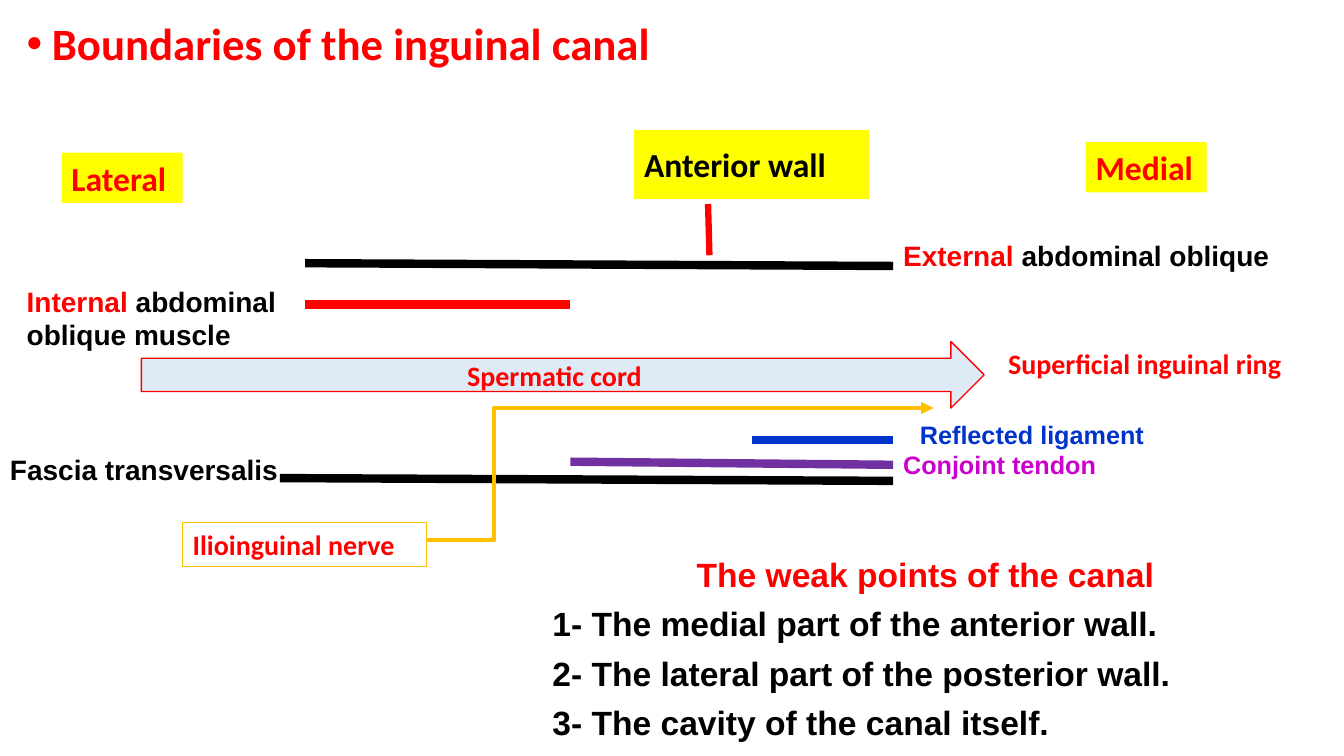
from lxml import etree
from pptx import Presentation
from pptx.dml.color import RGBColor
from pptx.enum.shapes import MSO_CONNECTOR, MSO_SHAPE
from pptx.enum.text import MSO_ANCHOR, PP_ALIGN
from pptx.oxml.ns import qn
from pptx.util import Pt

STRAIGHT, ELBOW = MSO_CONNECTOR.STRAIGHT, MSO_CONNECTOR.ELBOW
RECTANGLE, ARROW = MSO_SHAPE.RECTANGLE, MSO_SHAPE.RIGHT_ARROW
CALLOUT = MSO_SHAPE.LINE_CALLOUT_1_NO_BORDER
TOP, MIDDLE = MSO_ANCHOR.TOP, MSO_ANCHOR.MIDDLE
LEFT, CENTER = PP_ALIGN.LEFT, PP_ALIGN.CENTER

COLORS = {
    "red": "FF0000", "black": "000000", "blue": "0033CC", "magenta": "CC00CC",
    "purple": "7030A0", "yellow": "FFFF00", "pale": "DEEBF7", "gold": "FFC000",
}

TITLE = "Boundaries of the inguinal canal"
WALL_RIGHT = 638
LAYERS = [
    ((218, 188), (WALL_RIGHT, 190), "black"),
    ((218, 217.5), (407.5, 217.5), "red"),
    ((200, 341.5), (WALL_RIGHT, 343.5), "black"),
    ((537, 314.5), (WALL_RIGHT, 314.5), "blue"),
    ((407.5, 329.8), (WALL_RIGHT, 332), "purple"),
]
LABELS = [
    ((WALL_RIGHT, 166.5, 315, 31.5), "Arial", 20, [("External", "red"), (" abdominal oblique", "black")]),
    ((12, 199.5, 211, 55.5), "Arial", 20, [("Internal", "red"), (" abdominal oblique muscle", "black")]),
    ((0, 320, 218, 31.5), "Arial", 20, [("Fascia transversalis", "black")]),
    ((WALL_RIGHT, 317.5, 192, 29), "Arial", 18, [("Conjoint tendon", "magenta")]),
    ((650, 296, 192, 29), "Arial", 18, [("Reflected ligament", "blue")]),
    ((713, 244, 212, 31.5), "Calibri", 20, [("Superficial inguinal ring", "red")]),
]
SHAPES = [
    (RECTANGLE, (44, 109, 86.5, 36), "yellow", None, 0, "Lateral", 24, "red", TOP, LEFT),
    (RECTANGLE, (775.5, 101.5, 86.5, 36), "yellow", None, 0, "Medial", 24, "red", TOP, LEFT),
    (CALLOUT, (453, 93, 168, 49), "yellow", "red", 4.5, "Anterior wall", 24, "black", MIDDLE, LEFT),
    (ARROW, (101, 244, 602, 47.5), "pale", "red", 1, "Spermatic cord", 20, "red", MIDDLE, CENTER),
    (RECTANGLE, (130.5, 373.5, 174, 31.5), None, "gold", 0.75, "Ilioinguinal nerve", 20, "red", TOP, LEFT),
]
CALLOUT_POINTS = (1.076, 0.314, 1.823, 0.32)
NERVE = ((304.5, 386), (667, 291.5))
NERVE_BEND = 13400
WEAK_BOX = (369.5, 386, 583, 146)
WEAK_TITLE = "The weak points of the canal"
WEAK_POINTS = [
    "1- The medial part of the anterior wall.",
    "2- The lateral part of the posterior wall.",
    "3- The cavity of the canal itself.",
]


def rgb(name):
    return RGBColor.from_string(COLORS[name])


def points(values):
    return [Pt(value) for value in values]


def write(para, spans, font, size):
    for text, color in spans:
        span = para.add_run()
        span.text = text
        span.font.color.rgb = rgb(color)
    para.font.name, para.font.size, para.font.bold = font, Pt(size), True


def add_box(page, place):
    frame = page.shapes.add_textbox(*points(place)).text_frame
    frame.word_wrap = True
    return frame


def add_title(page):
    para = add_box(page, (12, 12, 882, 474)).paragraphs[0]
    para.line_spacing = 0.9
    props = para._p.get_or_add_pPr()
    props.set("marL", str(Pt(18)))
    props.set("indent", str(Pt(-18)))
    color = etree.SubElement(props, qn("a:buClr"))
    etree.SubElement(color, qn("a:srgbClr"), val=COLORS["red"])
    etree.SubElement(props, qn("a:buFont"), typeface="Arial")
    etree.SubElement(props, qn("a:buChar"), char="•")
    write(para, [(TITLE, "red")], "Calibri", 32)


def add_line(page, kind, start, end, color, width):
    line = page.shapes.add_connector(kind, *points(start + end))
    line.line.color.rgb = rgb(color)
    line.line.width = Pt(width)
    etree.SubElement(line._element.spPr, qn("a:effectLst"))
    return line


def add_nerve(page):
    nerve = add_line(page, ELBOW, *NERVE, "gold", 3)
    etree.SubElement(nerve.line._get_or_add_ln(), qn("a:tailEnd"), type="triangle")
    guides = nerve._element.spPr.find(qn("a:prstGeom")).find(qn("a:avLst"))
    etree.SubElement(guides, qn("a:gd"), name="adj1", fmla=f"val {NERVE_BEND}")


def add_shape(page, kind, place, fill, outline, width, text, size, color, anchor, align):
    shape = page.shapes.add_shape(kind, *points(place))
    shape.shadow.inherit = False
    if fill:
        shape.fill.solid()
        shape.fill.fore_color.rgb = rgb(fill)
    else:
        shape.fill.background()
    if outline:
        shape.line.color.rgb = rgb(outline)
        shape.line.width = Pt(width)
    else:
        shape.line.fill.background()
    if kind == CALLOUT:
        for index, value in enumerate(CALLOUT_POINTS):
            shape.adjustments[index] = value
    frame = shape.text_frame
    frame.word_wrap = True
    frame.vertical_anchor = anchor
    para = frame.paragraphs[0]
    para.alignment = align
    write(para, [(text, color)], "Calibri", size)


def add_weak_points(page):
    frame = add_box(page, WEAK_BOX)
    for index, text in enumerate([WEAK_TITLE] + WEAK_POINTS):
        para = frame.add_paragraph() if index else frame.paragraphs[0]
        para.line_spacing = 1.22
        if index:
            para._p.get_or_add_pPr().set("marL", str(Pt(18)))
        else:
            para.alignment = CENTER
        write(para, [(text, "black" if index else "red")], "Arial", 24)


def main():
    deck = Presentation()
    deck.slide_width, deck.slide_height = Pt(960), Pt(540)
    page = deck.slides.add_slide(deck.slide_layouts[6])
    add_title(page)
    for start, end, color in LAYERS:
        add_line(page, STRAIGHT, start, end, color, 6)
    for place, font, size, spans in LABELS:
        write(add_box(page, place).paragraphs[0], spans, font, size)
    for row in SHAPES:
        add_shape(page, *row)
    add_nerve(page)
    add_weak_points(page)
    deck.save("out.pptx")


if __name__ == "__main__":
    main()
